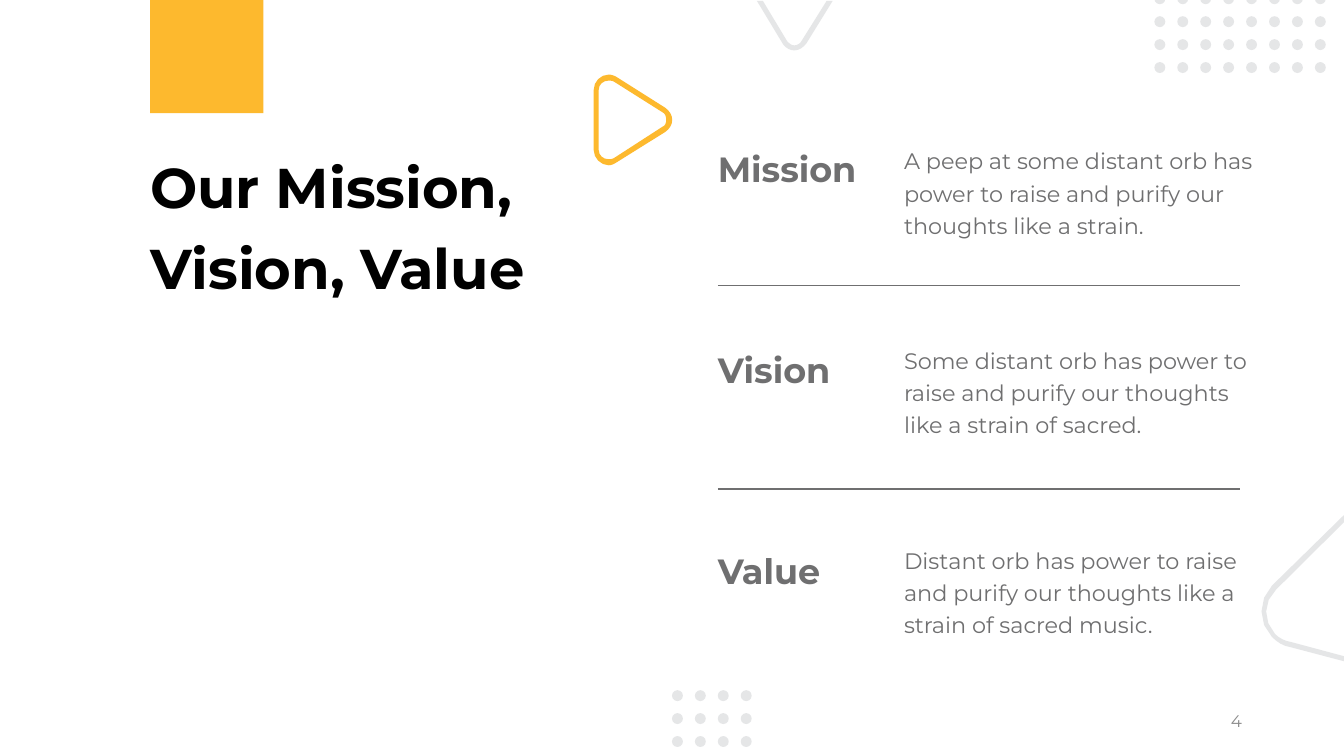
import dataclasses
import itertools
import math

import lxml.etree
import pptx
import pptx.dml.color
import pptx.enum.shapes
import pptx.enum.text
import pptx.oxml.ns
import pptx.shapes.autoshape
import pptx.shapes.base
import pptx.slide
import pptx.text.text
import pptx.util

Point = tuple[float, float]
Step = tuple[Point, ...]


@dataclasses.dataclass(frozen=True)
class Theme:
    font: str = "Montserrat"
    accent: str = "FDB92E"
    decor: str = "E5E6E7"
    heading: str = "000000"
    body: str = "6F6F70"
    page: str = "8C8C8C"
    title_size: float = 40
    label_size: float = 25
    body_size: float = 16
    page_size: float = 12
    line_spacing: float = 1.2
    space_before: float = 10


@dataclasses.dataclass(frozen=True)
class Statement:
    label: str
    label_width: float
    description: str


@dataclasses.dataclass(frozen=True)
class DotField:
    left: float
    top: float
    columns: int
    rows: int


@dataclasses.dataclass(frozen=True)
class Outline:
    color: str
    contours: tuple[tuple[Step, ...], ...]


THEME = Theme()
DOT_RADIUS = 3.9
DOT_PITCH = 16.38
CURVE_PARTS = 4
LABEL_LEFT = 512.8
RULE_RIGHT = 885.6

STATEMENTS = (
    Statement("Mission", 100, "A peep at some distant orb has power to raise and purify our thoughts like a strain."),
    Statement("Vision", 81.4, "Some distant orb has power to raise and purify our thoughts like a strain of sacred."),
    Statement("Value", 74.9, "Distant orb has power to raise and purify our thoughts like a strain of sacred music."),
)

DOT_FIELDS = (DotField(824.6, -4.8, 8, 4), DotField(480, 493, 4, 3))

OUTLINES = (
    Outline(THEME.decor, ((
        ((540.7, 0.7),), ((559.4, 31.7),),
        ((561.6, 34.6), (564.5, 36), (567.4, 36)),
        ((571, 36), (573.8, 33.8), (576, 31)),
        ((594.7, 0.7),), ((590.4, 0.7),), ((572.4, 29.5),),
        ((571.7, 31), (569.5, 32.4), (567.4, 32.4)),
        ((565.2, 32.4), (563.8, 31), (562.3, 29.5)),
        ((545, 0.7),),
    ),)),
    Outline(THEME.decor, ((
        ((960, 472.3),), ((921.6, 462.2),),
        ((916.6, 461.5), (912.2, 458.6), (908.6, 455)),
        ((898.6, 445), (898.6, 428.4), (908.6, 418.3)),
        ((960, 367.9),), ((960, 373),), ((911.5, 421.2),),
        ((902.2, 429.8), (902.2, 443.5), (910.8, 452.9)),
        ((913.7, 455.8), (918, 458), (922.3, 458.6)),
        ((960, 468.7),),
    ),)),
    Outline(THEME.accent, ((
        ((439.9, 54.7),), ((475.2, 77),),
        ((478.1, 79.2), (480.2, 82.1), (480.2, 85.7)),
        ((480.2, 89.3), (478.1, 92.2), (475.2, 94.3)),
        ((440.6, 115.9),),
        ((438.5, 117.4), (436.3, 118.1), (434.9, 118.1)),
        ((429.1, 118.1), (424.1, 113), (424.1, 107.3)),
        ((424.1, 64.1),),
        ((424.1, 58.3), (429.1, 53.3), (434.9, 53.3)),
        ((436.3, 53.3), (438.5, 54), (439.9, 54.7)),
    ), (
        ((438.5, 58.3),),
        ((437, 57.6), (435.6, 57.6), (434.9, 57.6)),
        ((430.6, 57.6), (427.7, 60.5), (427.7, 64.1)),
        ((427.7, 107.3),),
        ((427.7, 110.9), (430.6, 113.8), (434.9, 113.8)),
        ((435.6, 113.8), (437, 113.8), (438.5, 113)),
        ((473, 90.7),),
        ((475.2, 90), (475.9, 87.8), (475.9, 85.7)),
        ((475.9, 83.5), (475.2, 81.4), (473.8, 80.6)),
    ))),
)


def rgb(color: str) -> pptx.dml.color.RGBColor:
    return pptx.dml.color.RGBColor.from_string(color)


def fill_plain(shape: pptx.shapes.autoshape.Shape, color: str) -> None:
    shape.fill.solid()
    shape.fill.fore_color.rgb = rgb(color)
    shape.line.fill.background()
    shape.shadow.inherit = False


def place(shape: pptx.shapes.base.BaseShape, left: float, top: float, width: float, height: float) -> None:
    shape.left, shape.top, shape.width, shape.height = map(pptx.util.Pt, (left, top, width, height))


def write(frame: pptx.text.text.TextFrame, text: str, size: float, color: str, bold: bool = False) -> None:
    frame.text = text
    font = frame.paragraphs[0].runs[0].font
    font.name, font.size, font.bold = THEME.font, pptx.util.Pt(size), bold
    font.color.rgb = rgb(color)


def set_flush(frame: pptx.text.text.TextFrame, wrap: bool) -> None:
    frame.margin_left = frame.margin_top = frame.margin_right = frame.margin_bottom = 0
    frame.vertical_anchor = pptx.enum.text.MSO_ANCHOR.TOP
    frame.word_wrap = wrap
    frame.auto_size = pptx.enum.text.MSO_AUTO_SIZE.SHAPE_TO_FIT_TEXT
    paragraph = frame.paragraphs[0]
    paragraph.alignment = pptx.enum.text.PP_ALIGN.LEFT
    paragraph.line_spacing = THEME.line_spacing
    paragraph.space_before = pptx.util.Pt(THEME.space_before)


def flatten(steps: tuple[Step, ...]) -> list[Point]:
    points = [steps[0][0]]
    for step in steps[1:]:
        if len(step) == 1:
            points.append(step[0])
            continue
        controls = (points[-1], *step)
        for part in range(1, CURVE_PARTS + 1):
            t = part / CURVE_PARTS
            weights = [math.comb(3, k) * t**k * (1 - t) ** (3 - k) for k in range(4)]
            x, y = (sum(w * c[axis] for w, c in zip(weights, controls)) for axis in (0, 1))
            points.append((x, y))
    return points


def draw_contours(slide: pptx.slide.Slide, contours: list[list[Point]], color: str) -> pptx.shapes.autoshape.Shape:
    scaled = [[(pptx.util.Pt(x), pptx.util.Pt(y)) for x, y in contour] for contour in contours]
    builder = slide.shapes.build_freeform(*scaled[0][0])
    for index, contour in enumerate(scaled):
        if index:
            builder.move_to(*contour[0])
        builder.add_line_segments(contour[1:], close=True)
    shape = builder.convert_to_shape()
    fill_plain(shape, color)
    return shape


def draw_dots(slide: pptx.slide.Slide, field: DotField) -> None:
    r = DOT_RADIUS
    diamonds = []
    for row, column in itertools.product(range(field.rows), range(field.columns)):
        x, y = field.left + r + column * DOT_PITCH, field.top + r + row * DOT_PITCH
        diamonds.append([(x - r, y), (x, y - r), (x + r, y), (x, y + r), (x - r, y)])
    dots = draw_contours(slide, diamonds, THEME.decor)
    radius = str(int(pptx.util.Pt(r)))
    edges = list(dots._element.iter(pptx.oxml.ns.qn("a:lnTo")))
    for edge, start in zip(edges, itertools.cycle((180, 270, 0, 90))):
        arc = lxml.etree.SubElement(edge.getparent(), pptx.oxml.ns.qn("a:arcTo"))
        for key, value in (("wR", radius), ("hR", radius), ("stAng", str(start * 60000)), ("swAng", "5400000")):
            arc.set(key, value)
        edge.getparent().replace(edge, arc)


def draw_statement(slide: pptx.slide.Slide, row: int, statement: Statement) -> None:
    description = slide.shapes.add_textbox(0, 0, 0, 0)
    place(description, 645.8, 101.5 + row * 142.6, 262.1, 67.7)
    write(description.text_frame, statement.description, THEME.body_size, THEME.body)
    set_flush(description.text_frame, wrap=True)
    label = slide.shapes.add_textbox(0, 0, 0, 0)
    place(label, LABEL_LEFT, 99.4 + row * 143.6, statement.label_width, 33.1)
    write(label.text_frame, statement.label, THEME.label_size, THEME.body, bold=True)
    set_flush(label.text_frame, wrap=False)


def draw_rule(slide: pptx.slide.Slide, y: float) -> None:
    ends = map(pptx.util.Pt, (LABEL_LEFT, y, RULE_RIGHT, y))
    rule = slide.shapes.add_connector(pptx.enum.shapes.MSO_CONNECTOR.STRAIGHT, *ends)
    rule.line.color.rgb = rgb(THEME.body)
    rule.line.width = pptx.util.Pt(1)
    lxml.etree.SubElement(rule._element.spPr, pptx.oxml.ns.qn("a:effectLst"))


def main() -> None:
    deck = pptx.Presentation()
    deck.slide_width, deck.slide_height = pptx.util.Pt(960), pptx.util.Pt(540)
    slide = deck.slides.add_slide(deck.slide_layouts.get_by_name("Title Only"))

    square = slide.shapes.add_shape(pptx.enum.shapes.MSO_SHAPE.RECTANGLE, 0, 0, 0, 0)
    place(square, 107.3, 0, 80.9, 80.9)
    fill_plain(square, THEME.accent)

    page_number = slide.shapes.add_textbox(0, 0, 0, 0)
    place(page_number, 678.2, 500.4, 216, 28.8)
    write(page_number.text_frame, "4", THEME.page_size, THEME.page)
    page_number.text_frame.word_wrap = True
    page_number.text_frame.vertical_anchor = pptx.enum.text.MSO_ANCHOR.MIDDLE
    page_number.text_frame.paragraphs[0].alignment = pptx.enum.text.PP_ALIGN.RIGHT

    title = slide.shapes.title
    place(title, 107.3, 99.4, 326.9, 111.6)
    write(title.text_frame, "Our Mission, Vision, Value", THEME.title_size, THEME.heading, bold=True)
    set_flush(title.text_frame, wrap=True)

    for row, statement in enumerate(STATEMENTS):
        draw_statement(slide, row, statement)
    for gap in range(len(STATEMENTS) - 1):
        draw_rule(slide, 203.8 + gap * 145.4)
    for field in DOT_FIELDS:
        draw_dots(slide, field)
    for outline in OUTLINES:
        draw_contours(slide, [flatten(steps) for steps in outline.contours], outline.color)

    deck.save("out.pptx")


if __name__ == "__main__":
    main()
